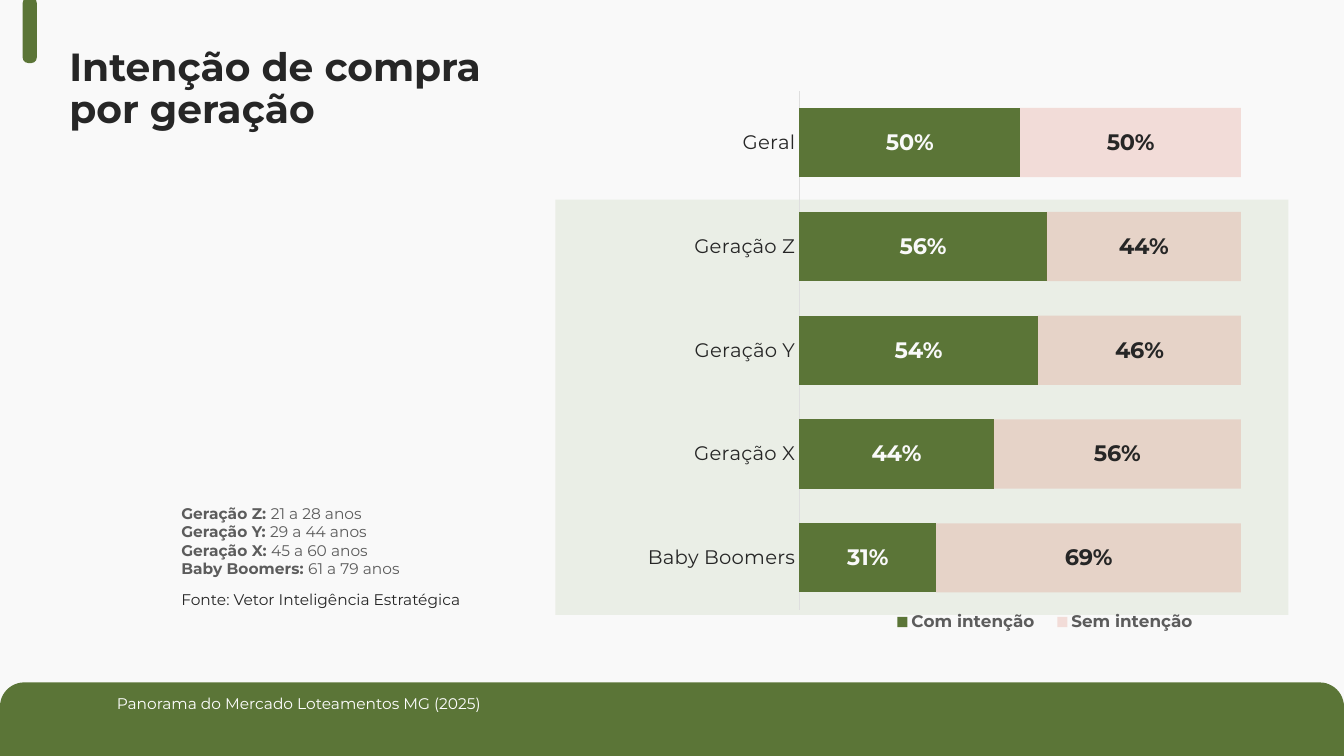
from lxml import etree
from pptx import Presentation
from pptx.chart.data import CategoryChartData
from pptx.dml.color import RGBColor
from pptx.enum import chart as charts, shapes, text
from pptx.oxml import ns
from pptx.util import Inches, Pt

GREEN = RGBColor(0x5B, 0x75, 0x37)
PALE_GREEN = RGBColor(0xEA, 0xEE, 0xE6)
RED = RGBColor(0xD7, 0x5D, 0x45)
PAPER = RGBColor(0xF9, 0xF9, 0xF9)
INK = RGBColor(0x26, 0x26, 0x26)
GRAY = RGBColor(0x5C, 0x5C, 0x5C)
AXIS_GRAY = RGBColor(0xDE, 0xDE, 0xDE)
WHITE = RGBColor(0xFF, 0xFF, 0xFF)
FONT = "Montserrat"

GENERATIONS = [
    ("Geração Z: ", "21 a 28 anos"),
    ("Geração Y: ", "29 a 44 anos"),
    ("Geração X: ", "45 a 60 anos"),
    ("Baby Boomers: ", "61 a 79 anos"),
]
INTENTION = {
    "Geral": 0.50,
    "Geração Z": 0.56,
    "Geração Y": 0.54,
    "Geração X": 0.44,
    "Baby Boomers": 0.31,
}


def style_font(font, size, color, bold=False):
    font.name = FONT
    font.size = Pt(size)
    font.bold = bold
    font.color.rgb = color


def add_block(page, left, top, width, height, color, rounding=None):
    kind = shapes.MSO_SHAPE.RECTANGLE
    if rounding is not None:
        kind = shapes.MSO_SHAPE.ROUNDED_RECTANGLE
    block = page.shapes.add_shape(
        kind, Inches(left), Inches(top), Inches(width), Inches(height))
    if rounding is not None:
        block.adjustments[0] = rounding
    block.shadow.inherit = False
    block.fill.solid()
    block.fill.fore_color.rgb = color
    block.line.fill.background()
    return block


def add_text(page, left, top, width, height, lines, size, color, bold=False):
    box = page.shapes.add_textbox(
        Inches(left), Inches(top), Inches(width), Inches(height))
    frame = box.text_frame
    frame.word_wrap = True
    frame.text = "\n".join(lines)
    for para in frame.paragraphs:
        for span in para.runs:
            style_font(span.font, size, color, bold)
    return frame


def add_generation_key(page):
    labels = [label for label, ages in GENERATIONS]
    frame = add_text(page, 1.7, 4.9, 2.58, 0.94, labels, 11, GRAY, True)
    frame.margin_top = frame.margin_bottom = Inches(0.1)
    for para, (label, ages) in zip(frame.paragraphs, GENERATIONS):
        span = para.add_run()
        span.text = ages
        style_font(span.font, 11, GRAY)


def place_part(part, index, left, top, width, height, inner=False):
    for old in part.findall(ns.qn("c:layout")):
        part.remove(old)
    layout = etree.Element(ns.qn("c:layout"))
    manual = etree.SubElement(layout, ns.qn("c:manualLayout"))
    settings = [("xMode", "edge"), ("yMode", "edge"), ("x", left),
                ("y", top), ("w", width), ("h", height)]
    if inner:
        settings.insert(0, ("layoutTarget", "inner"))
    for name, value in settings:
        etree.SubElement(manual, ns.qn("c:" + name)).set("val", str(value))
    part.insert(index, layout)


def style_series(series, fill_color, label_color):
    series.format.fill.solid()
    series.format.fill.fore_color.rgb = fill_color
    labels = series.data_labels
    labels.show_value = True
    labels.number_format = "0%"
    labels.number_format_is_linked = False
    labels.position = charts.XL_LABEL_POSITION.CENTER
    style_font(labels.font, 16, label_color, True)


def add_intention_chart(page):
    data = CategoryChartData(number_format="0%")
    data.categories = list(INTENTION)
    data.add_series("Com intenção", list(INTENTION.values()))
    data.add_series(
        "Sem intenção", [round(1 - share, 2) for share in INTENTION.values()])
    chart = page.shapes.add_chart(
        charts.XL_CHART_TYPE.BAR_STACKED_100, Inches(6.2), Inches(0.78),
        Inches(6.17), Inches(5.99), data).chart
    chart.has_title = False
    style_font(chart.font, 10, INK)
    chart.font.name = "Lato"

    plot = chart.plots[0]
    plot.vary_by_categories = False
    plot.gap_width = 50
    plot.overlap = 100
    with_intention, without_intention = plot.series
    style_series(with_intention, GREEN, PAPER)
    style_series(without_intention, RED, INK)
    tint = without_intention.format.fill._xPr.find(".//" + ns.qn("a:srgbClr"))
    etree.SubElement(tint, ns.qn("a:alpha")).set("val", "18000")

    categories = chart.category_axis
    categories.reverse_order = True
    categories.major_tick_mark = charts.XL_TICK_MARK.NONE
    categories.format.line.color.rgb = AXIS_GRAY
    categories.format.line.width = Pt(0.75)
    style_font(categories.tick_labels.font, 14, INK)
    values = chart.value_axis
    values.visible = False
    values.has_major_gridlines = False
    values.minimum_scale = 0
    values.maximum_scale = 1

    chart.has_legend = True
    legend = chart.legend
    legend.position = charts.XL_LEGEND_POSITION.BOTTOM
    legend.include_in_layout = False
    style_font(legend.font, 12, GRAY, True)
    place_part(legend._element, 1, 0.41, 0.87, 0.53, 0.06)
    plot_area = chart._chartSpace.find(".//" + ns.qn("c:plotArea"))
    place_part(plot_area, 0, 0.28, 0.02, 0.71, 0.86, inner=True)


def main():
    deck = Presentation()
    deck.slide_width = Inches(13.33)
    deck.slide_height = Inches(7.5)
    page = deck.slides.add_slide(deck.slide_layouts[6])
    page.background.fill.solid()
    page.background.fill.fore_color.rgb = PAPER

    add_block(page, 0, 6.77, 13.33, 0.48, GREEN, 0.5)
    add_block(page, 0, 7.02, 13.33, 0.48, GREEN)
    add_block(page, 5.51, 1.98, 7.27, 4.12, PALE_GREEN)
    add_intention_chart(page)
    add_generation_key(page)

    title = add_text(page, 0.59, 0.2, 4.7, 1.38,
                     ["Intenção de compra por geração"], 28, INK, True)
    title.vertical_anchor = text.MSO_ANCHOR.MIDDLE
    title.paragraphs[0].line_spacing = 0.9

    add_text(page, 1.7, 5.81, 3.12, 0.29,
             ["Fonte: Vetor Inteligência Estratégica"], 11, INK)
    tab = add_block(page, -0.03, 0.23, 0.65, 0.14, GREEN, 0.39)
    tab.rotation = 270
    add_text(page, 1.06, 6.84, 7.02, 0.29,
             ["Panorama do Mercado Loteamentos MG (2025)"], 11, WHITE)
    deck.save("out.pptx")


if __name__ == "__main__":
    main()
